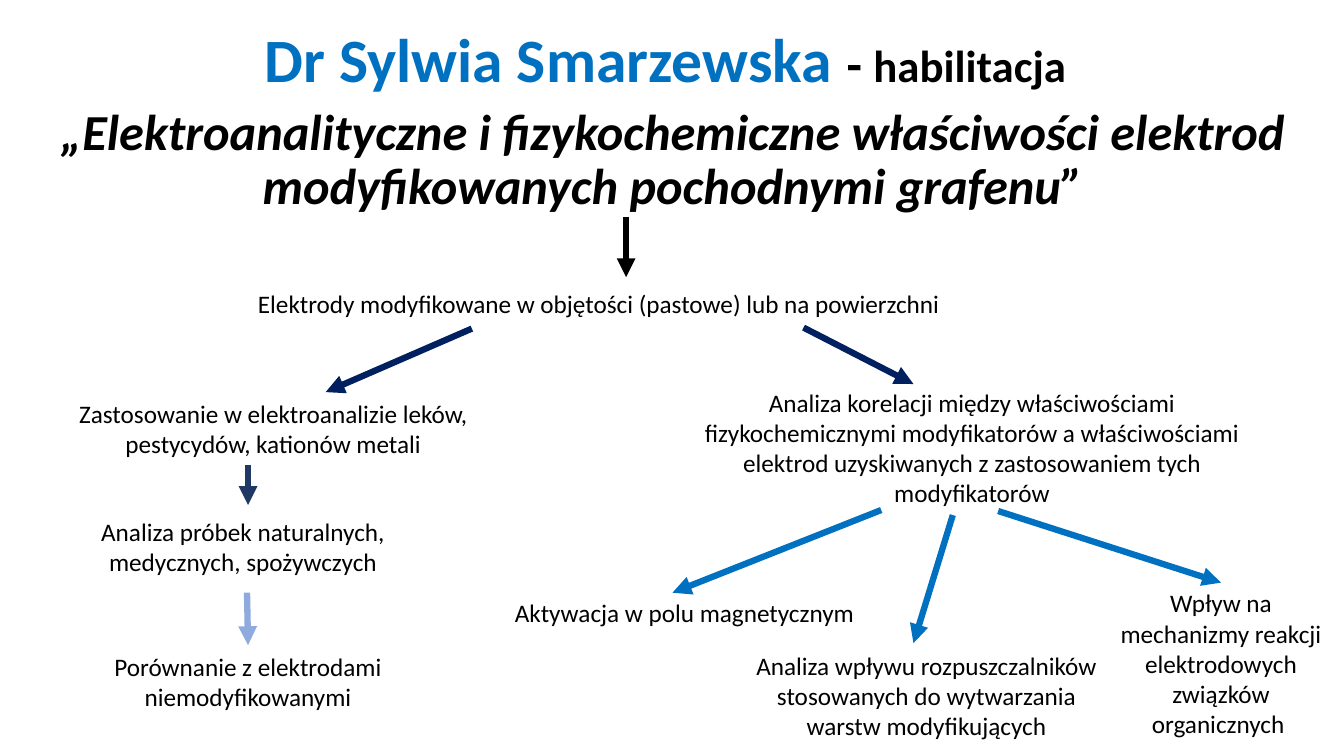
from lxml import etree
from pptx import Presentation
from pptx.dml.color import RGBColor
from pptx.enum import shapes, text
from pptx.oxml.ns import qn
from pptx.util import Inches, Pt

BLACK, NAVY, BLUE = "000000", "002060", "0070C0"
DARK_BLUE, PALE_BLUE = "203864", "8FAADC"

TITLE_RUNS = [
    ("Dr Sylwia Smarzewska ", 44, BLUE),
    ("- ", 36, BLACK),
    ("habilitacja", 32, BLACK),
    (" ", 44, BLUE),
]
THESIS = ("„Elektroanalityczne i fizykochemiczne właściwości elektrod "
          "modyfikowanych pochodnymi grafenu”")
ELECTRODES = "Elektrody modyfikowane w objętości (pastowe) lub na powierzchni"

TOPICS = [
    ("Zastosowanie w elektroanalizie leków, pestycydów, kationów metali",
     (0.6, 3.9, 4.22, 0.71)),
    ("Analiza próbek naturalnych, medycznych, spożywczych",
     (0.48, 5.07, 3.86, 0.71)),
    ("Porównanie z elektrodami niemodyfikowanymi",
     (0.23, 6.41, 4.46, 0.71)),
    ("Analiza korelacji między właściwościami fizykochemicznymi modyfikatorów "
     "a właściwościami elektrod uzyskiwanych z zastosowaniem tych modyfikatorów",
     (6.67, 3.79, 5.94, 1.31)),
    ("Aktywacja w polu magnetycznym",
     (4.86, 5.88, 3.86, 0.4)),
    ("Analiza wpływu rozpuszczalników stosowanych do wytwarzania "
     "warstw modyfikujących",
     (7.26, 6.4, 3.86, 1.01)),
    ("Wpływ na mechanizmy reakcji elektrodowych związków organicznych ",
     (10.89, 5.78, 2.44, 1.62)),
]

ARROWS = [
    ((6.21, 2.15), (6.21, 2.75), BLACK),
    ((4.68, 3.26), (3.23, 3.89), NAVY),
    ((7.97, 3.25), (9.06, 3.81), NAVY),
    ((2.46, 4.61), (2.46, 5.01), DARK_BLUE),
    ((2.45, 5.88), (2.46, 6.4), PALE_BLUE),
    ((8.74, 5.06), (6.67, 5.88), BLUE),
    ((9.45, 5.11), (9.06, 6.38), BLUE),
    ((9.9, 5.07), (12.11, 5.78), BLUE),
]


def color(value):
    """Return the colour for a hex string."""
    return RGBColor.from_string(value)


def add_text(slide, place, runs, bold=False, italic=False, wrap=True,
             align=text.PP_ALIGN.CENTER):
    """Add a one-paragraph text box and return its shape and paragraph."""
    shape = slide.shapes.add_textbox(*map(Inches, place))
    shape.text_frame.word_wrap = wrap
    paragraph = shape.text_frame.paragraphs[0]
    paragraph.alignment = align
    for words, size, fill in runs:
        run = paragraph.add_run()
        run.text = words
        run.font.name = "Calibri"
        run.font.size = Pt(size)
        run.font.bold = bold
        run.font.italic = italic
        run.font.color.rgb = color(fill)
    return shape, paragraph


def add_heading(slide):
    """Add the title and the thesis name below it."""
    title, paragraph = add_text(slide, (0.92, 0, 11.5, 1.25), TITLE_RUNS, bold=True)
    title.text_frame.vertical_anchor = text.MSO_ANCHOR.MIDDLE
    paragraph.line_spacing = 0.9
    thesis, paragraph = add_text(slide, (0.15, 1.01, 13.05, 1.19),
                                 [(THESIS, 36, BLACK)], bold=True, italic=True)
    paragraph.line_spacing = 0.9
    paragraph.space_before = Pt(10)


def add_arrow(slide, start, end, stroke):
    """Add a thick straight arrow from start to end."""
    arrow = slide.shapes.add_connector(
        shapes.MSO_CONNECTOR.STRAIGHT, *map(Inches, start + end))
    arrow.line.color.rgb = color(stroke)
    arrow.line.width = Pt(4.5)
    etree.SubElement(arrow.line._get_or_add_ln(), qn("a:tailEnd"), type="triangle")
    etree.SubElement(arrow._element.spPr, qn("a:effectLst"))


def main():
    """Build the slide and save it."""
    presentation = Presentation()
    presentation.slide_width = Inches(13.33)
    presentation.slide_height = Inches(7.5)
    slide = presentation.slides.add_slide(presentation.slide_layouts[6])
    add_heading(slide)
    add_text(slide, (2.46, 2.81, 6.98, 0.4), [(ELECTRODES, 18, BLACK)],
             wrap=False, align=text.PP_ALIGN.LEFT)
    for words, place in TOPICS:
        add_text(slide, place, [(words, 18, BLACK)])
    for start, end, stroke in ARROWS:
        add_arrow(slide, start, end, stroke)
    presentation.save("out.pptx")


if __name__ == "__main__":
    main()
